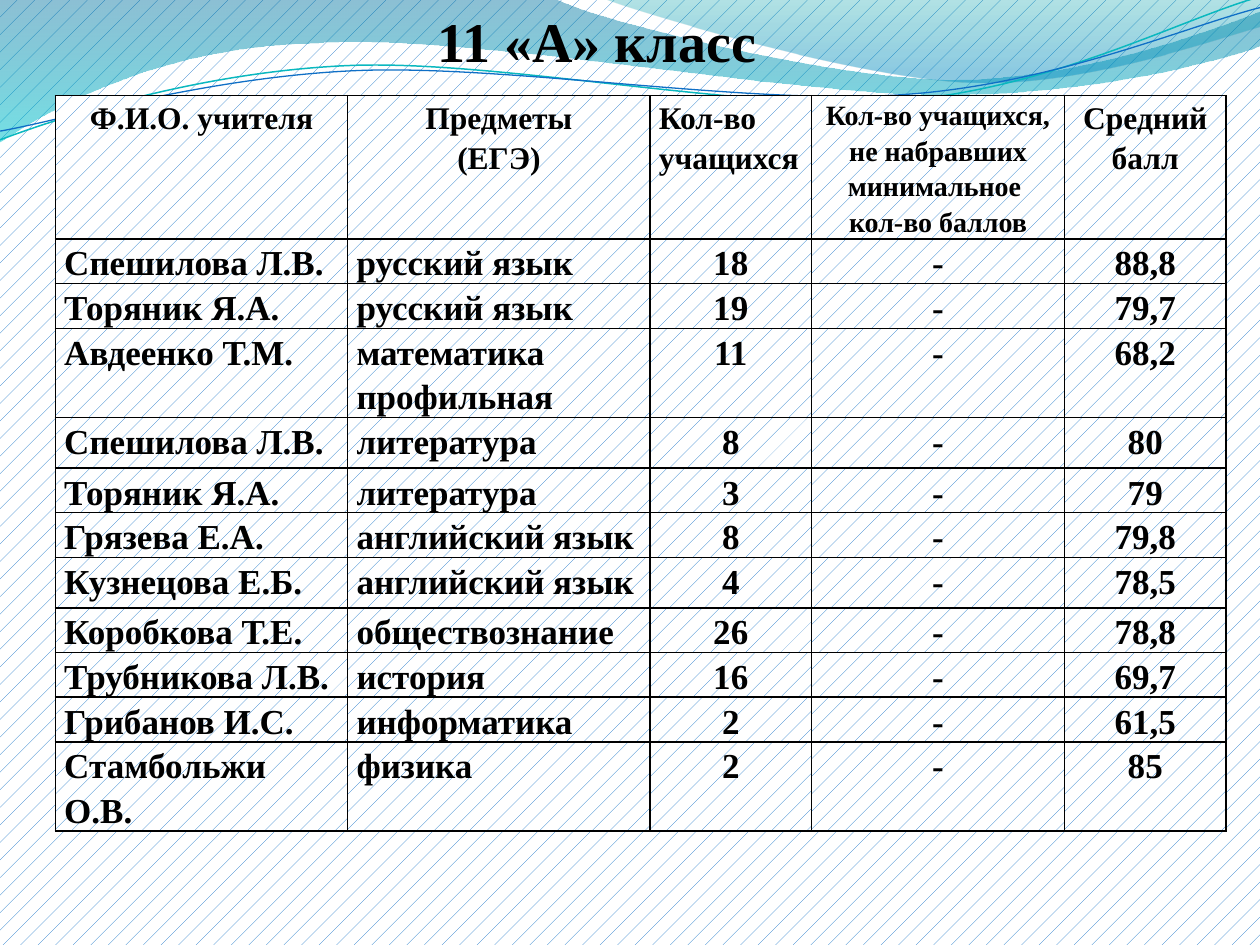
"""Build the slide with the exam results of class 11 «А»."""
from dataclasses import dataclass
from math import cos, radians, sin
from typing import Any

from lxml.etree import SubElement
from pptx import Presentation
from pptx.dml.color import RGBColor
from pptx.enum.dml import MSO_PATTERN
from pptx.enum.text import MSO_ANCHOR, MSO_AUTO_SIZE, PP_ALIGN
from pptx.oxml import parse_xml
from pptx.oxml.ns import nsdecls, qn
from pptx.util import Inches, Pt

BLUE = RGBColor(0x0F, 0x6F, 0xC6)
TEAL = RGBColor(0x0A, 0xB8, 0xBF)
WHITE = RGBColor(0xFF, 0xFF, 0xFF)
BLACK = RGBColor(0x00, 0x00, 0x00)
DEEP_BLUE = RGBColor(0x00, 0x74, 0xA1)
CYAN = RGBColor(0x00, 0xC6, 0xCF)
SEA_GREEN = RGBColor(0x00, 0xA1, 0xA9)
SKY_BLUE = RGBColor(0x00, 0x8B, 0xBF)

FONT = {"name": "Times New Roman", "bold": True}
LINE_TURN = 357.3

Point = tuple[float, float]
Segment = list[Point]


@dataclass
class Stop:
    position: float
    color: RGBColor
    opacity: int


@dataclass
class Band:
    start: Point
    segments: list[Segment]
    stops: list[Stop]


@dataclass
class Ripple:
    start: Point
    segments: list[Segment]
    center: Point
    color: RGBColor
    width: float


@dataclass
class Column:
    heading: str
    width: float
    heading_size: int
    heading_align: PP_ALIGN
    body_align: PP_ALIGN


BANDS = [
    Band((0, 0), [[(4.4, -0.01)],
                  [(4.76, 0.17), (6.64, 0.63), (7.58, 0.63)],
                  [(8.53, 0.63), (9.58, 0.26), (10, 0.09)],
                  [(10.01, 0.36)],
                  [(9.83, 0.44), (8.7, 0.76), (7.46, 0.75)],
                  [(6.22, 0.75), (3.82, 0.28), (2.57, 0.34)],
                  [(1.29, 0.36), (0.46, 0.83), (-0.01, 1.13)],
                  [(0, 0)]],
         [Stop(0, DEEP_BLUE, 45), Stop(1, CYAN, 55)]),
    Band((4.79, -0.01), [[(5.09, 0.11), (6.82, 0.62), (7.69, 0.65)],
                         [(8.56, 0.69), (9.61, 0.32), (10, 0.21)],
                         [(10, 0)],
                         [(4.79, -0.01)]],
         [Stop(0, SEA_GREEN, 30), Stop(0.8, SKY_BLUE, 45)]),
]
RIPPLES = [
    Ripple((0, 1.11), [[(0.48, 0.93), (1.58, 0.57), (2.77, 0.52)],
                       [(3.95, 0.47), (5.93, 0.89), (7.13, 0.8)],
                       [(8.33, 0.71), (9.38, 0.15), (9.98, -0.02)]], (4.99, 0.57), TEAL, 0.85),
    Ripple((0, 1.04), [[(0.47, 0.96), (1.64, 0.61), (2.83, 0.56)],
                       [(4.03, 0.51), (5.97, 0.84), (7.17, 0.75)],
                       [(8.36, 0.67), (9.41, 0.21), (10, 0.06)]], (4.99, 0.59), BLUE, 0.75),
]
COLUMNS = [
    Column("Ф.И.О. учителя", 2.32, 18, PP_ALIGN.CENTER, PP_ALIGN.LEFT),
    Column("Предметы\n(ЕГЭ)", 2.4, 18, PP_ALIGN.CENTER, PP_ALIGN.JUSTIFY),
    Column("Кол-во учащихся", 1.28, 18, PP_ALIGN.JUSTIFY, PP_ALIGN.CENTER),
    Column("Кол-во учащихся, не набравших минимальное \nкол-во баллов", 2.01, 16,
           PP_ALIGN.CENTER, PP_ALIGN.CENTER),
    Column("Средний балл", 1.28, 18, PP_ALIGN.CENTER, PP_ALIGN.CENTER),
]
ROW_HEIGHTS = [1.02, 0.22, 0.22, 0.68, 0.4, 0.34, 0.32, 0.4, 0.31, 0.35, 0.34, 0.41]
RESULTS = [
    ("Спешилова Л.В.", "русский язык", "18", "-", "88,8"),
    ("Торяник Я.А.", "русский язык", "19", "-", "79,7"),
    ("Авдеенко Т.М.", "математика профильная", "11", "-", "68,2"),
    ("Спешилова Л.В.", "литература", "8", "-", "80"),
    ("Торяник Я.А.", "литература", "3", "-", "79"),
    ("Грязева Е.А.", "английский язык", "8", "-", "79,8"),
    ("Кузнецова Е.Б.", "английский язык", "4", "-", "78,5"),
    ("Коробкова Т.Е.", "обществознание", "26", "-", "78,8"),
    ("Трубникова Л.В.", "история ", "16", "-", "69,7"),
    ("Грибанов И.С.", "информатика", "2", "-", "61,5"),
    ("Стамбольжи О.В.", "физика", "2", "-", "85"),
]


def apply_format(target: Any, values: dict[str, Any]) -> None:
    """Set every named attribute on the target."""
    for name, value in values.items():
        setattr(target, name, value)


def fill_pattern(fill: Any) -> None:
    """Give a fill the light blue pattern."""
    fill.patterned()
    fill.pattern = MSO_PATTERN.PERCENT_5
    fill.fore_color.rgb = BLUE
    fill.back_color.rgb = WHITE


def turn(point: Point, center: Point, degrees: float) -> Point:
    """Rotate a point clockwise about a center."""
    angle = radians(degrees)
    across, down = point[0] - center[0], point[1] - center[1]
    return (center[0] + across * cos(angle) - down * sin(angle),
            center[1] + across * sin(angle) + down * cos(angle))


def draw_outline(page: Any, start: Point, segments: list[Segment], close: bool) -> Any:
    """Draw a freeform whose three-point segments are cubic curves."""
    builder = page.shapes.build_freeform(Inches(start[0]), Inches(start[1]))
    points = [(Inches(x), Inches(y)) for segment in segments for x, y in segment]
    builder.add_line_segments(points, close=close)
    outline = builder.convert_to_shape()
    outline.shadow.inherit = False
    steps = iter(list(outline._element.spPr.iter(qn("a:lnTo"))))
    for segment in segments:
        lines = [next(steps) for _ in segment]
        if len(lines) == 3:
            curve = parse_xml(f'<a:cubicBezTo {nsdecls("a")}/>')
            lines[0].addprevious(curve)
            for line in lines:
                curve.append(line[0])
                line.getparent().remove(line)
    return outline


def draw_band(page: Any, band: Band) -> None:
    """Draw a translucent gradient band."""
    outline = draw_outline(page, band.start, band.segments, True)
    outline.line.fill.background()
    outline.fill.gradient()
    outline.fill.gradient_angle = 270
    for gradient_stop, stop in zip(outline.fill.gradient_stops, band.stops):
        gradient_stop.position = stop.position
        gradient_stop.color.rgb = stop.color
    for color, stop in zip(outline._element.spPr.iter(qn("a:srgbClr")), band.stops):
        SubElement(color, qn("a:alpha"), val=str(stop.opacity * 1000))


def draw_ripple(page: Any, ripple: Ripple) -> None:
    """Draw a thin wavy line, tilted as a whole."""
    start, *segments = [[turn(point, ripple.center, -LINE_TURN) for point in segment]
                        for segment in [[ripple.start], *ripple.segments]]
    outline = draw_outline(page, start[0], segments, False)
    outline.rotation = LINE_TURN
    outline.fill.background()
    outline.line.color.rgb = ripple.color
    outline.line.width = Pt(ripple.width)


def write_cell(cell: Any, text: str, size: int, align: PP_ALIGN) -> None:
    """Fill, frame and write one table cell."""
    cell.text = text
    apply_format(cell, {"margin_left": Inches(0.07), "margin_right": Inches(0.07),
                        "margin_top": 0, "margin_bottom": 0})
    for para in cell.text_frame.paragraphs:
        apply_format(para, {"alignment": align, "line_spacing": 1.15})
        for span in para.runs:
            apply_format(span.font, FONT | {"size": Pt(size)})
            span.font.color.rgb = BLACK
    fill_pattern(cell.fill)
    for index, side in enumerate(("lnL", "lnR", "lnT", "lnB")):
        cell._tc.tcPr.insert(index, parse_xml(
            f'<a:{side} {nsdecls("a")} w="{Pt(1)}"><a:solidFill><a:srgbClr val="{BLACK}"/>'
            f'</a:solidFill></a:{side}>'))


def draw_results(page: Any) -> None:
    """Draw the table of teachers, subjects and scores."""
    frame = page.shapes.add_table(len(ROW_HEIGHTS), len(COLUMNS), Inches(0.44), Inches(0.76),
                                  Inches(9.29), Inches(6.24))
    apply_format(frame.table, {"first_row": False, "horz_banding": False})
    for row, height in zip(frame.table.rows, ROW_HEIGHTS):
        row.height = Inches(height)
    for index, column in enumerate(COLUMNS):
        frame.table.columns[index].width = Inches(column.width)
        write_cell(frame.table.cell(0, index), column.heading, column.heading_size, column.heading_align)
        for number, result in enumerate(RESULTS, 1):
            write_cell(frame.table.cell(number, index), result[index], 20, column.body_align)


def write_title(page: Any) -> None:
    """Write the class name above the table."""
    title = page.shapes.title
    apply_format(title, {"left": Inches(2.87), "top": 0, "width": Inches(3.86), "height": Inches(0.64)})
    apply_format(title.text_frame, {"text": "11 «А» класс", "word_wrap": True,
                                    "auto_size": MSO_AUTO_SIZE.SHAPE_TO_FIT_TEXT,
                                    "vertical_anchor": MSO_ANCHOR.TOP})
    para = title.text_frame.paragraphs[0]
    para.alignment = PP_ALIGN.LEFT
    para._p.get_or_add_pPr().set("indent", str(Inches(0.5)))
    apply_format(para.runs[0].font, FONT | {"size": Pt(32)})
    para.runs[0].font.color.rgb = BLACK
    page.shapes._spTree.append(title._element)


def main() -> None:
    """Build and save the deck."""
    deck = Presentation()
    apply_format(deck, {"slide_width": Inches(10), "slide_height": Inches(7.5)})
    page = deck.slides.add_slide(deck.slide_layouts[5])
    fill_pattern(page.background.fill)
    for band in BANDS:
        draw_band(page, band)
    for ripple in RIPPLES:
        draw_ripple(page, ripple)
    draw_results(page)
    write_title(page)
    deck.save("out.pptx")


if __name__ == "__main__":
    main()
